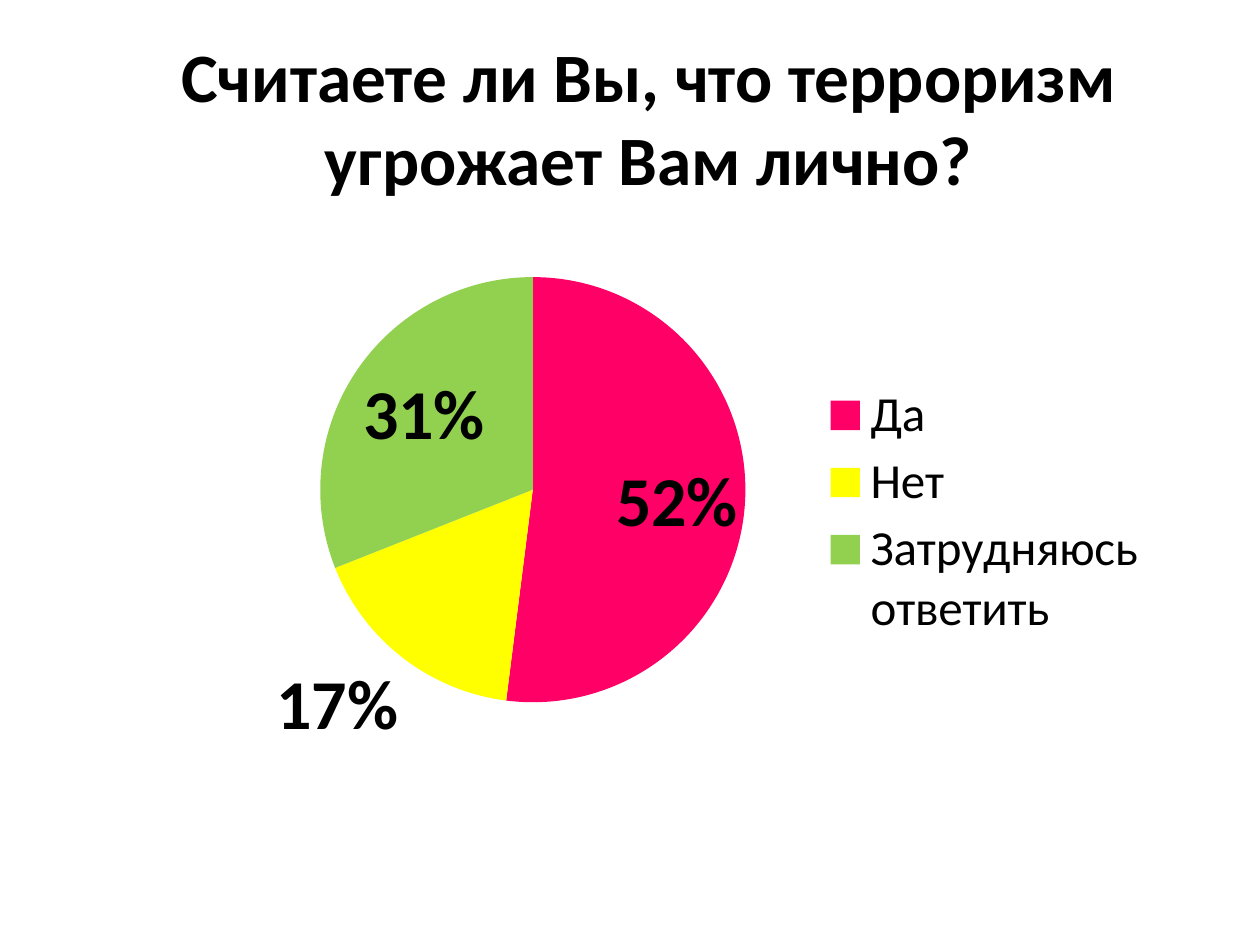
from lxml import etree
from pptx import Presentation
from pptx.chart.data import CategoryChartData
from pptx.dml.color import RGBColor
from pptx.enum import chart as charts, text
from pptx.oxml import ns
from pptx.util import Inches, Pt

BLACK = RGBColor(0x00, 0x00, 0x00)
PINK = RGBColor(0xFF, 0x00, 0x66)
YELLOW = RGBColor(0xFF, 0xFF, 0x00)
GREEN = RGBColor(0x92, 0xD0, 0x50)
FONT = "Calibri"

INSIDE = charts.XL_LABEL_POSITION.INSIDE_END
OUTSIDE = charts.XL_LABEL_POSITION.OUTSIDE_END

# Answer, share, slice colour, label position
ANSWERS = [
    ("Да", 0.52, PINK, INSIDE),
    ("Нет", 0.17, YELLOW, OUTSIDE),
    ("Затрудняюсь ответить", 0.31, GREEN, INSIDE),
]


def style_font(font, size, bold=False):
    font.name = FONT
    font.size = Pt(size)
    font.bold = bold
    font.color.rgb = BLACK


def set_layout(element, successors, inner=False, **fractions):
    """Place a chart part by fractions of the chart's size."""
    for old in element.findall(ns.qn("c:layout")):
        element.remove(old)
    layout = etree.Element(ns.qn("c:layout"))
    manual = etree.SubElement(layout, ns.qn("c:manualLayout"))
    settings = {"layoutTarget": "inner"} if inner else {}
    settings.update(xMode="edge", yMode="edge", **fractions)
    for name, value in settings.items():
        etree.SubElement(manual, ns.qn(f"c:{name}")).set("val", str(value))
    following = next(child for child in element
                     if child.tag in [ns.qn(name) for name in successors])
    following.addprevious(layout)


def add_title(slide, left, top, width, height):
    title = slide.shapes.title
    title.left, title.top, title.width, title.height = left, top, width, height
    frame = title.text_frame
    frame.word_wrap = True
    frame.auto_size = text.MSO_AUTO_SIZE.NONE
    frame.vertical_anchor = text.MSO_ANCHOR.MIDDLE
    frame.text = "Считаете ли Вы, что терроризм угрожает Вам лично?"
    paragraph = frame.paragraphs[0]
    paragraph.alignment = text.PP_ALIGN.CENTER
    style_font(paragraph.font, 39.6, bold=True)


def add_answers_pie(slide, left, top, width, height):
    data = CategoryChartData(number_format="0%")
    data.categories = [answer[0] for answer in ANSWERS]
    data.add_series("Series 1", [answer[1] for answer in ANSWERS])
    chart = slide.shapes.add_chart(
        charts.XL_CHART_TYPE.PIE, left, top, width, height, data).chart
    chart.has_title = False
    style_font(chart.font, 18)

    # Slices and their labels
    plot = chart.plots[0]
    plot.vary_by_categories = True
    series = plot.series[0]
    labels = series.data_labels
    labels.show_value = True
    labels.number_format = "0%"
    labels.number_format_is_linked = False
    style_font(labels.font, 40, bold=True)
    for index, (_, _, color, position) in enumerate(ANSWERS):
        point = series.points[index]
        point.format.fill.solid()
        point.format.fill.fore_color.rgb = color
        style_font(point.data_label.font, 40, bold=True)
        point.data_label.position = position

    # Legend
    chart.has_legend = True
    legend = chart.legend
    legend.position = charts.XL_LEGEND_POSITION.RIGHT
    legend.include_in_layout = False
    style_font(legend.font, 28)

    # Places of the pie and the legend
    plot_area = chart.element.find(".//" + ns.qn("c:plotArea"))
    set_layout(plot_area, ["c:pieChart"], inner=True,
               x=0.17, y=0.09, w=0.42, h=0.76)
    legend_element = chart.element.find(".//" + ns.qn("c:legend"))
    set_layout(legend_element, ["c:overlay"], x=0.66, y=0.27, w=0.33, h=0.48)


def main():
    presentation = Presentation()
    presentation.slide_width = Inches(10)
    presentation.slide_height = Inches(7.5)
    slide = presentation.slides.add_slide(presentation.slide_layouts[5])
    add_title(slide, Inches(0.65), Inches(0.3), Inches(9), Inches(1.25))
    add_answers_pie(slide, Inches(1.17), Inches(1.8), Inches(8.05), Inches(4.44))
    presentation.save("out.pptx")


if __name__ == "__main__":
    main()
